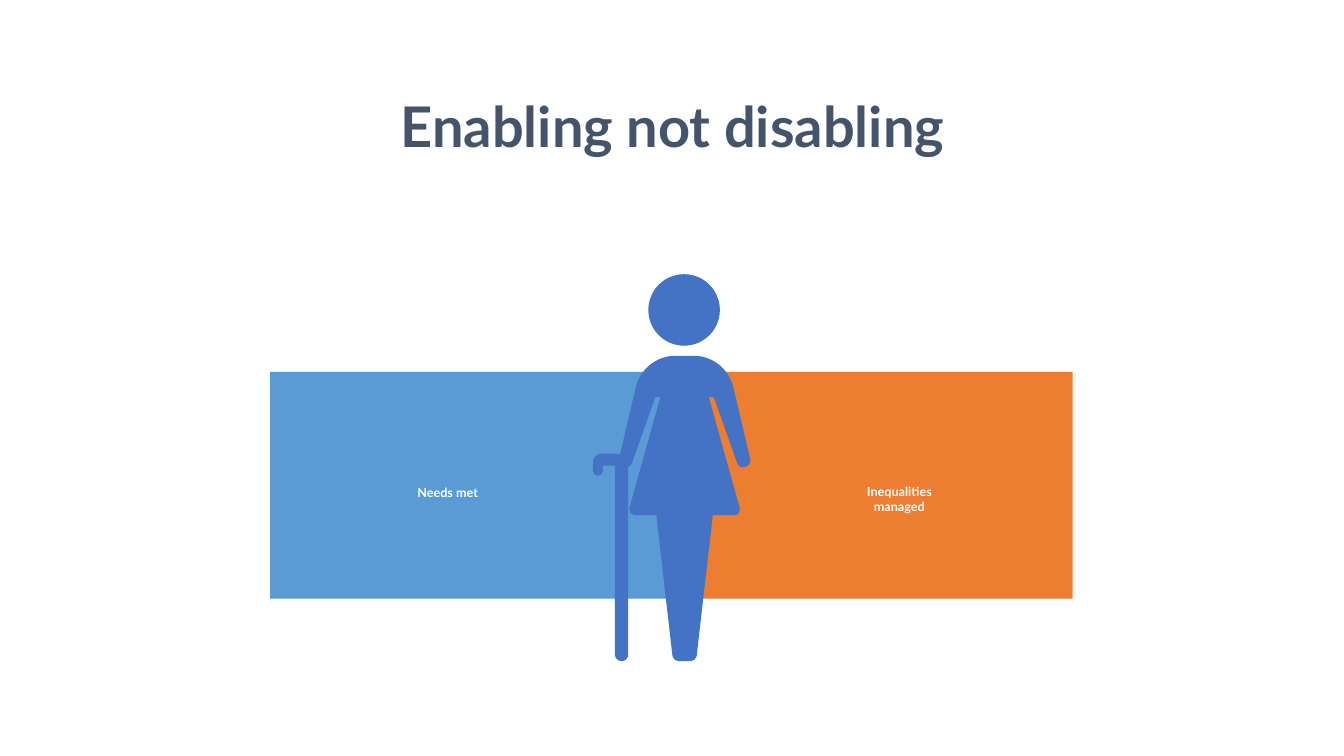
from lxml import etree
from pptx import Presentation
from pptx.dml.color import RGBColor
from pptx.enum.shapes import MSO_SHAPE
from pptx.enum.text import MSO_ANCHOR, PP_ALIGN
from pptx.oxml.ns import qn
from pptx.util import Pt

PX = 9144  # EMU per px, 100 px to the inch

SLATE = RGBColor(0x44, 0x54, 0x6A)
SKY = RGBColor(0x5B, 0x9B, 0xD5)
ORANGE = RGBColor(0xED, 0x7D, 0x31)
BLUE = RGBColor(0x44, 0x72, 0xC4)
WHITE = RGBColor(0xFF, 0xFF, 0xFF)

TITLE = "Enabling not disabling"
TITLE_BOX = (361, 86, 612, 77)
PANELS = [  # text, fill, label box
    ("Needs met", SKY, (379, 476, 130, 25)),
    ("Inequalities managed", ORANGE, (827, 475, 130, 40)),
]
PANEL_LEFT, PANEL_TOP, PANEL_W, PANEL_H = 268, 369, 398, 225

HEAD_BOX = (643, 272, 71, 71)
# Outlines: two numbers are a line's end, six are a cubic curve
CANE = [
    (611, 450), (596, 450), (592, 450, 588, 454, 588, 459),
    (588, 467), (588, 470, 590, 472, 593, 472), (596, 472, 598, 470, 598, 467),
    (598, 462), (610, 462), (610, 650), (610, 653, 613, 656, 617, 656),
    (620, 656, 623, 653, 623, 650), (623, 462), (623, 455, 617, 450, 611, 450),
]
BODY_AXIS = 679
RIGHT_BODY = [
    (688, 353), (706, 353, 722, 365, 727, 383), (744, 455),
    (745, 458, 743, 462, 740, 463), (736, 465, 732, 463, 731, 459),
    (708, 394), (703, 394), (734, 505), (734, 508, 732, 511, 729, 511),
    (707, 511), (691, 651), (690, 654, 688, 656, 685, 656),
]


def emu(box):
    return [v * PX for v in box]


def pairs(seg):
    return list(zip(seg[::2], seg[1::2]))


def mirror(outline, axis):
    """Reflect an outline across a vertical axis, running it backwards."""
    flipped = [[(2 * axis - x, y) for x, y in pairs(seg)] for seg in outline]
    result = [flipped[-1][-1]]
    for seg, before in zip(flipped[:0:-1], flipped[-2::-1]):
        back = seg[-2::-1] + [before[-1]]
        result.append(tuple(v for point in back for v in point))
    return result


def paint(sp, color):
    sp.shadow.inherit = False
    sp.fill.solid()
    sp.fill.fore_color.rgb = color
    sp.line.fill.background()


def add_outline(shapes, outline, color):
    """Draw the segment ends as a freeform, then bend the curved segments."""
    ends = [seg[-2:] for seg in outline]
    builder = shapes.build_freeform(*ends[0], scale=PX)
    builder.add_line_segments(ends[1:], close=True)
    sp = builder.convert_to_shape()
    paint(sp, color)
    left, top = min(x for x, _ in ends), min(y for _, y in ends)
    lines = list(sp.element.iter(qn("a:lnTo")))
    for line, seg in zip(lines, outline[1:]):
        if len(seg) == 6:
            curve = etree.Element(qn("a:cubicBezTo"))
            for x, y in pairs(seg):
                etree.SubElement(curve, qn("a:pt"), x=str(x - left), y=str(y - top))
            line.getparent().replace(line, curve)


def add_preset(shapes, kind, box, color):
    paint(shapes.add_shape(kind, *emu(box)), color)


def write(sp, text, *, size, color, wrap=True, anchor=MSO_ANCHOR.TOP):
    tf = sp.text_frame
    tf.word_wrap = wrap
    tf.vertical_anchor = anchor
    p = tf.paragraphs[0]
    p.alignment = PP_ALIGN.CENTER
    r = p.add_run()
    r.text = text
    r.font.name = "Lato"
    r.font.size = Pt(size)
    r.font.bold = True
    r.font.color.rgb = color


def main():
    prs = Presentation()
    prs.slide_width, prs.slide_height = 1333 * PX, 750 * PX
    s = prs.slides.add_slide(prs.slide_layouts[5])
    shapes = s.shapes

    title = shapes.title
    title.left, title.top, title.width, title.height = emu(TITLE_BOX)
    write(title, TITLE, size=40, color=SLATE, wrap=False)

    for i, (_, color, _) in enumerate(PANELS):
        box = (PANEL_LEFT + i * PANEL_W, PANEL_TOP, PANEL_W, PANEL_H)
        add_preset(shapes, MSO_SHAPE.RECTANGLE, box, color)

    add_outline(shapes, CANE, BLUE)
    add_preset(shapes, MSO_SHAPE.OVAL, HEAD_BOX, BLUE)
    add_outline(shapes, RIGHT_BODY + mirror(RIGHT_BODY, BODY_AXIS), BLUE)

    for text, _, box in PANELS:
        write(shapes.add_textbox(*emu(box)), text, size=9, color=WHITE)

    prs.save("out.pptx")


if __name__ == "__main__":
    main()
